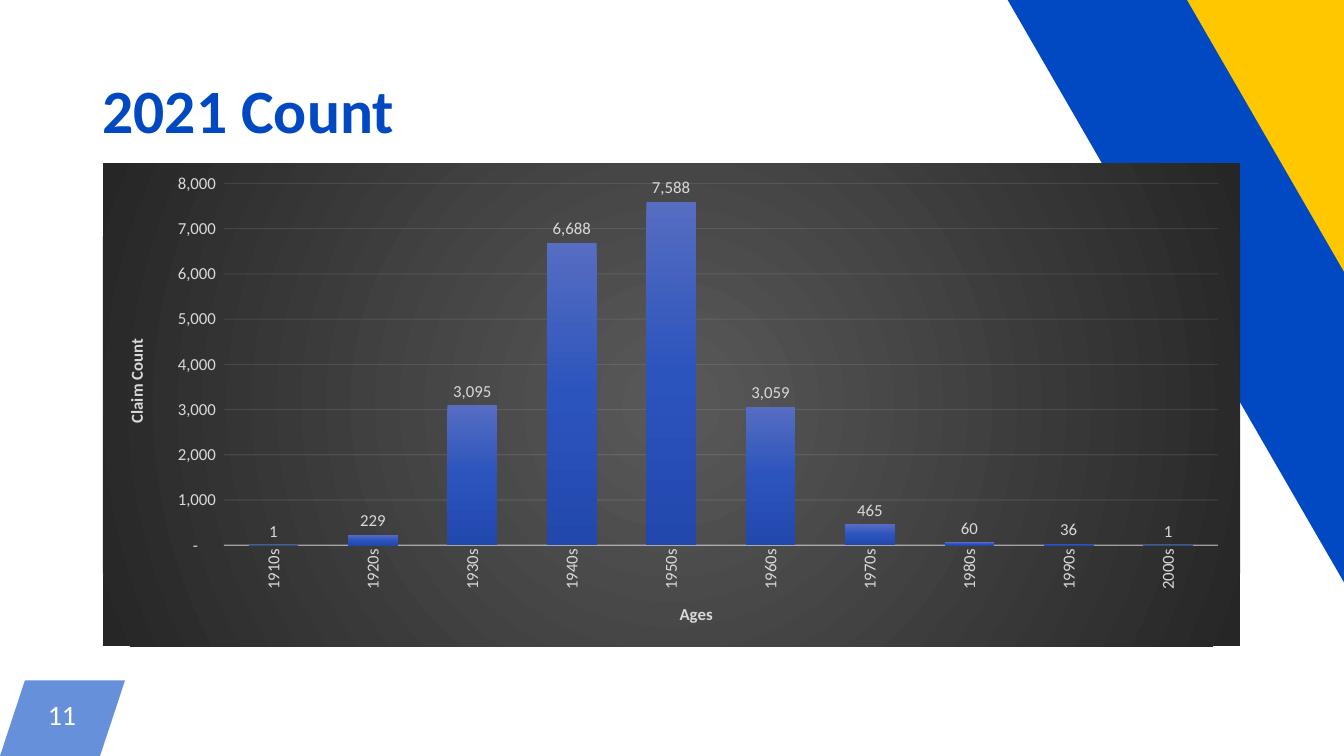
from dataclasses import dataclass

import pptx
import pptx.chart.data
import pptx.dml.color
import pptx.enum.chart
import pptx.enum.shapes
import pptx.enum.text
import pptx.oxml
import pptx.oxml.ns
import pptx.util
from pptx.util import Inches

qn = pptx.oxml.ns.qn
NAMESPACES = pptx.oxml.ns.nsdecls("a", "c")
NUMBER_FORMAT = '_(* #,##0_);_(* \\(#,##0\\);_(* "-"??_);_('
CHART_WIDTH = 11.28
CHART_HEIGHT = 4.79
CLAIMS = {
    "1910s": 1, "1920s": 229, "1930s": 3095, "1940s": 6688, "1950s": 7588,
    "1960s": 3059, "1970s": 465, "1980s": 60, "1990s": 36, "2000s": 1,
}


@dataclass(frozen=True)
class Theme:
    font: str = "Calibri"
    blue: str = "0049C2"
    yellow: str = "FFC700"
    white: str = "FFFFFF"
    chart_text: str = "D9D9D9"
    chart_line: str = "F2F2F2"
    bar_stops: tuple = ((0, "566DC1"), (50, "2C54BD"), (100, "2248AD"))
    panel_stops: tuple = ((0, "595959"), (100, "262626"))
    title_size: int = 44
    number_size: int = 20
    chart_size: int = 12


THEME = Theme()


def rgb(color):
    return pptx.dml.color.RGBColor.from_string(color)


def style_font(font, size, color, bold=False):
    font.name = THEME.font
    font.size = pptx.util.Pt(size)
    font.color.rgb = rgb(color)
    font.bold = bold


def set_opacity(element, percent):
    for color in element.iter(qn("a:srgbClr")):
        alpha = pptx.oxml.parse_xml(f'<a:alpha {NAMESPACES} val="{percent * 1000}"/>')
        color.append(alpha)


def add_text(slide, text, left, top, width, height, *, size, color, bold=False,
             align=pptx.enum.text.PP_ALIGN.LEFT, line_spacing=1.0, margin=None):
    box = slide.shapes.add_textbox(Inches(left), Inches(top), Inches(width), Inches(height))
    frame = box.text_frame
    frame.word_wrap = True
    frame.vertical_anchor = pptx.enum.text.MSO_ANCHOR.MIDDLE
    if margin is not None:
        frame.margin_left = frame.margin_right = Inches(margin)
        frame.margin_top = frame.margin_bottom = Inches(margin)
    paragraph = frame.paragraphs[0]
    paragraph.text = text
    paragraph.alignment = align
    paragraph.line_spacing = line_spacing
    style_font(paragraph.runs[0].font, size, color, bold)


def add_filled_shape(slide, kind, left, top, width, height, color, rotation=0):
    shape = slide.shapes.add_shape(kind, Inches(left), Inches(top),
                                   Inches(width), Inches(height))
    shape.rotation = rotation
    shape.shadow.inherit = False
    shape.fill.solid()
    shape.fill.fore_color.rgb = rgb(color)
    shape.line.fill.background()
    return shape


def add_number_tab(slide):
    tab = add_filled_shape(slide, pptx.enum.shapes.MSO_SHAPE.PARALLELOGRAM,
                           0, 6.75, 1.24, 0.75, THEME.blue)
    tab.adjustments[0] = 0.33
    set_opacity(tab.element.spPr, 60)


def gradient_properties(stops, direction):
    stop_xml = "".join(f'<a:gs pos="{position * 1000}"><a:srgbClr val="{color}"/></a:gs>'
                       for position, color in stops)
    return pptx.oxml.parse_xml(
        f"<c:spPr {NAMESPACES}><a:gradFill><a:gsLst>{stop_xml}</a:gsLst>{direction}"
        "</a:gradFill><a:ln><a:noFill/></a:ln></c:spPr>")


def place(element, target="", **lengths):
    layout = element.find(qn("c:layout"))
    if layout is None:
        layout = pptx.oxml.parse_xml(f"<c:layout {NAMESPACES}/>")
        element.insert(0, layout)
    totals = {"x": CHART_WIDTH, "y": CHART_HEIGHT, "w": CHART_WIDTH, "h": CHART_HEIGHT}
    values = "".join(f'<c:{name} val="{length / totals[name]}"/>'
                     for name, length in lengths.items())
    layout.append(pptx.oxml.parse_xml(
        f'<c:manualLayout {NAMESPACES}>{target}<c:xMode val="edge"/><c:yMode val="edge"/>'
        f"{values}</c:manualLayout>"))


def turn_upright(body):
    properties = body.find(qn("a:bodyPr"))
    properties.set("rot", "-5400000")
    properties.set("vert", "horz")


def style_axis(axis, title, x, y):
    axis.major_tick_mark = axis.minor_tick_mark = pptx.enum.chart.XL_TICK_MARK.NONE
    style_font(axis.tick_labels.font, THEME.chart_size, THEME.chart_text)
    frame = axis.axis_title.text_frame
    frame.text = title
    style_font(frame.paragraphs[0].runs[0].font, THEME.chart_size, THEME.chart_text, True)
    place(axis.axis_title._element, x=x, y=y)


def style_line(line, width, element, opacity):
    line.color.rgb = rgb(THEME.chart_line)
    line.width = pptx.util.Pt(width)
    set_opacity(element.find(qn("c:spPr")), opacity)


def style_bars(plot):
    plot.vary_by_categories = False
    plot.gap_width = 100
    plot.overlap = -24
    series = plot.series[0]
    series.invert_if_negative = False
    properties = series._element.get_or_add_spPr()
    properties.getparent().replace(
        properties, gradient_properties(THEME.bar_stops, '<a:lin ang="5400000" scaled="0"/>'))
    plot.has_data_labels = True
    labels = plot.data_labels
    labels.show_value = True
    labels.position = pptx.enum.chart.XL_LABEL_POSITION.OUTSIDE_END
    labels.number_format = NUMBER_FORMAT
    labels.number_format_is_linked = False
    style_font(labels.font, THEME.chart_size, THEME.chart_text)


def add_claims_chart(slide):
    data = pptx.chart.data.CategoryChartData()
    data.categories = list(CLAIMS)
    data.add_series("Series 1", list(CLAIMS.values()))
    chart = slide.shapes.add_chart(
        pptx.enum.chart.XL_CHART_TYPE.COLUMN_CLUSTERED,
        Inches(1.02), Inches(1.62), Inches(CHART_WIDTH), Inches(CHART_HEIGHT), data).chart
    chart.has_legend = False
    chart.has_title = False
    style_font(chart.font, THEME.chart_size, THEME.chart_text)
    style_bars(chart.plots[0])

    ages = chart.category_axis
    style_axis(ages, "Ages", 5.69, 4.33)
    style_line(ages.format.line, 1, ages._element, 54)
    turn_upright(ages._element.find(qn("c:txPr")))

    counts = chart.value_axis
    style_axis(counts, "Claim Count", 0.19, 1.71)
    turn_upright(counts.axis_title.text_frame._txBody)
    counts.minimum_scale, counts.maximum_scale, counts.major_unit = 0, 8000, 1000
    counts.tick_labels.number_format = NUMBER_FORMAT
    counts.tick_labels.number_format_is_linked = False
    counts.format.line.fill.background()
    gridlines = counts.major_gridlines
    style_line(gridlines.format.line, 0.75, counts._element.find(qn("c:majorGridlines")), 10)

    chart_element = chart._chartSpace.find(qn("c:chart"))
    place(chart_element.find(qn("c:plotArea")), '<c:layoutTarget val="inner"/>',
          x=1.2, y=0.2, w=9.86, h=3.59)
    chart_element.addnext(gradient_properties(
        THEME.panel_stops,
        '<a:path path="circle"><a:fillToRect l="50000" t="50000" r="50000" b="50000"/></a:path>'))


def main():
    presentation = pptx.Presentation()
    presentation.slide_width = Inches(13.33)
    presentation.slide_height = Inches(7.5)
    slide = presentation.slides.add_slide(presentation.slide_layouts[6])
    add_number_tab(slide)
    add_text(slide, "11", 0.25, 6.75, 0.73, 0.75, size=THEME.number_size, color=THEME.white,
             align=pptx.enum.text.PP_ALIGN.CENTER, line_spacing=pptx.util.Pt(17.7), margin=0.04)
    stripe = pptx.enum.shapes.MSO_SHAPE.RECTANGLE
    add_filled_shape(slide, stripe, 12.78, -3.31, 1.97, 9.81, THEME.yellow, rotation=330.2)
    add_filled_shape(slide, stripe, 11.82, -1.95, 1.54, 9.81, THEME.blue, rotation=330)
    add_text(slide, "2021 Count", 0.92, 0.4, 11.5, 1.45, size=THEME.title_size,
             color=THEME.blue, bold=True, line_spacing=0.9)
    add_claims_chart(slide)
    presentation.save("out.pptx")


if __name__ == "__main__":
    main()
